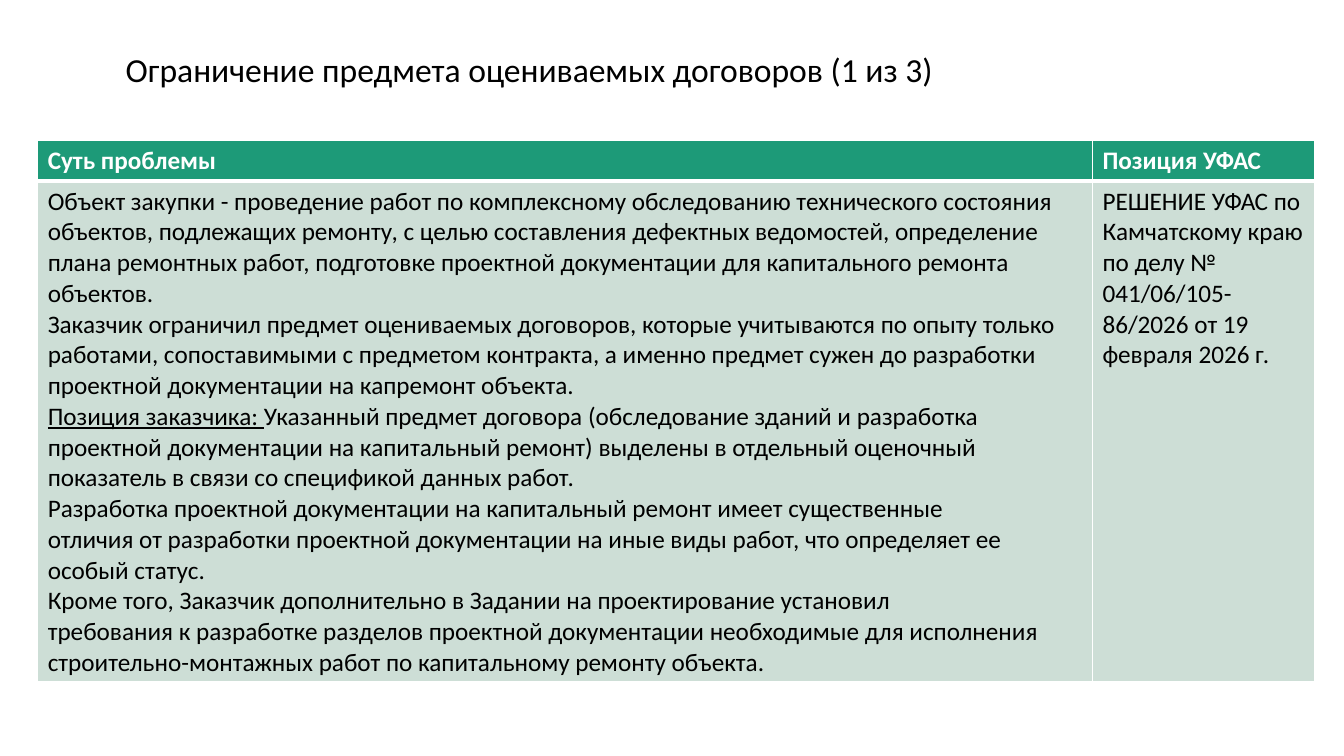
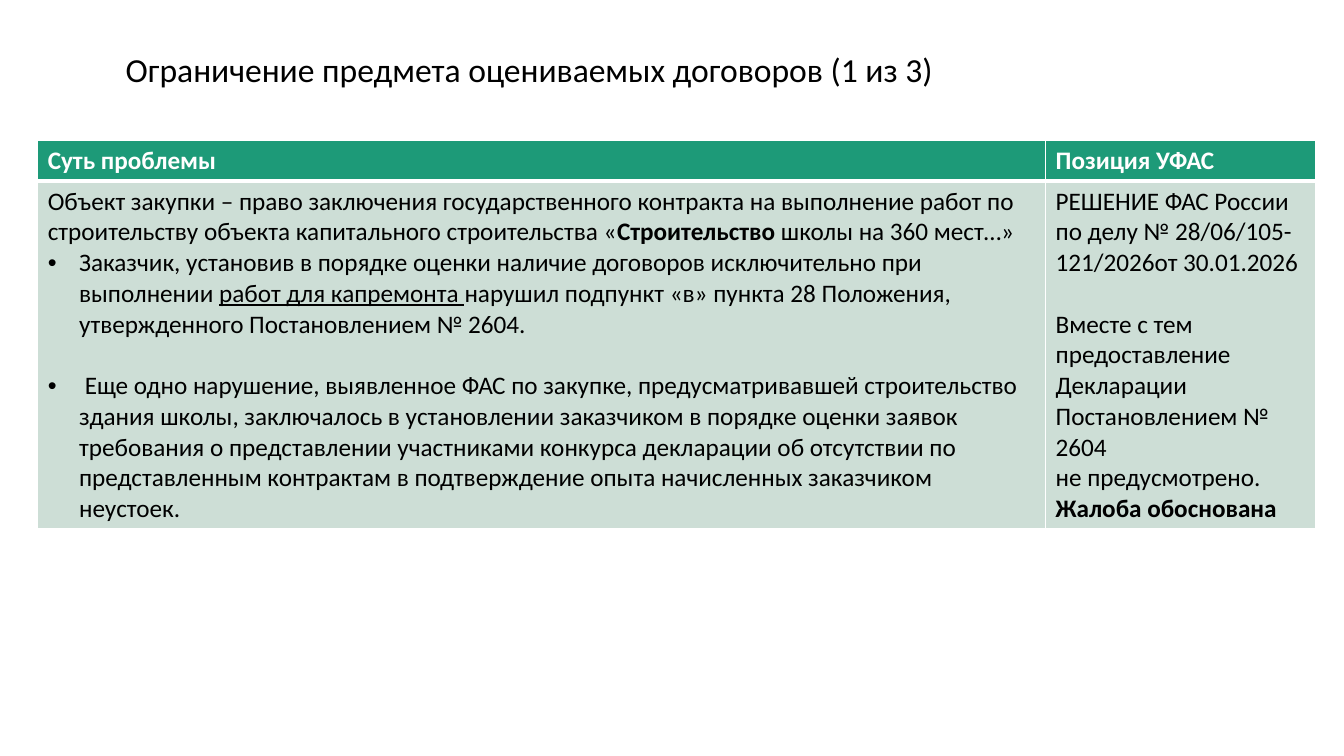
from dataclasses import dataclass

from lxml import etree
from pptx import Presentation
from pptx import util as u
from pptx.dml.color import RGBColor
from pptx.enum import text
from pptx.oxml.ns import qn

COLORS = {"ink": "000000", "white": "FFFFFF", "header": "1D9A78", "body": "CDDED6"}
FONT = "Calibri"
TITLE = "Ограничение предмета оцениваемых договоров (1 из 3)"
HEADERS = ("Суть проблемы", "Позиция УФАС")
BODY_SIZE = 18
BLANK_LINE = 22
HEADER_HEIGHT = 1.03
BULLET_INDENT = 0.79


@dataclass(frozen=True)
class Run:
    text: str
    bold: bool = False
    underline: bool = False


@dataclass(frozen=True)
class Para:
    runs: tuple[Run, ...]
    bullet: bool = False
    before: float = 0


@dataclass(frozen=True)
class Case:
    widths: tuple[float, float]
    height: float
    problem: tuple[Para, ...]
    position: tuple[Para, ...]


def para(*parts: str | Run, bullet: bool = False, before: float = 0) -> Para:
    runs = tuple(Run(part) if isinstance(part, str) else part for part in parts)
    return Para(runs, bullet, before)


CASES = (
    Case(
        (26.58, 5.6),
        12.62,
        (
            para("Объект закупки - проведение работ по комплексному обследованию технического состояния "
                 "объектов, подлежащих ремонту, с целью составления дефектных ведомостей, определение "
                 "плана ремонтных работ, подготовке проектной документации для капитального ремонта объектов."),
            para("Заказчик ограничил предмет оцениваемых договоров, которые учитываются по опыту только "
                 "работами, сопоставимыми с предметом контракта, а именно предмет сужен до разработки "
                 "проектной документации на капремонт объекта."),
            para(Run("Позиция заказчика: ", underline=True),
                 "Указанный предмет договора (обследование зданий и разработка проектной документации "
                 "на капитальный ремонт) выделены в отдельный оценочный показатель в связи со спецификой "
                 "данных работ."),
            para("Разработка проектной документации на капитальный ремонт имеет существенные"),
            para("отличия от разработки проектной документации на иные виды работ, что определяет ее"),
            para("особый статус."),
            para("Кроме того, Заказчик дополнительно в Задании на проектирование установил"),
            para("требования к разработке разделов проектной документации необходимые для исполнения"),
            para("строительно-монтажных работ по капитальному ремонту объекта."),
        ),
        (
            para("РЕШЕНИЕ УФАС по Камчатскому краю"),
            para("по делу № 041/06/105-86/2026 от 19 февраля 2026 г."),
        ),
    ),
    Case(
        (25.4, 6.8),
        8.76,
        (
            para("Объект закупки – право заключения государственного контракта на выполнение работ по "
                 "строительству объекта капитального строительства «",
                 Run("Строительство", bold=True),
                 " школы на 360 мест…»"),
            para("Заказчик, установив в порядке оценки наличие договоров исключительно при выполнении ",
                 Run("работ для капремонта ", underline=True),
                 "нарушил подпункт «в» пункта 28 Положения, утвержденного Постановлением № 2604.",
                 bullet=True),
            para(" Еще одно нарушение, выявленное ФАС по закупке, предусматривавшей строительство "
                 "здания школы, заключалось в установлении заказчиком в порядке оценки заявок требования "
                 "о представлении участниками конкурса декларации об отсутствии по представленным "
                 "контрактам в подтверждение опыта начисленных заказчиком неустоек.",
                 bullet=True, before=BLANK_LINE),
        ),
        (
            para("РЕШЕНИЕ ФАС России"),
            para("по делу № 28/06/105-121/2026от 30.01.2026"),
            para("Вместе с тем предоставление Декларации Постановлением № 2604", before=BLANK_LINE),
            para("не предусмотрено."),
            para(Run("Жалоба обоснована", bold=True)),
        ),
    ),
)


def add_bullet(p) -> None:
    pPr = p._p.get_or_add_pPr()
    pPr.set("marL", str(u.Cm(BULLET_INDENT)))
    pPr.set("indent", str(-u.Cm(BULLET_INDENT)))
    etree.SubElement(pPr, qn("a:buFont"), typeface="Arial")
    etree.SubElement(pPr, qn("a:buChar"), char="•")


def write(tf, paras: tuple[Para, ...], *, size: float = BODY_SIZE, color: str = "ink",
          line_spacing: float = 1.0) -> None:
    for i, item in enumerate(paras):
        p = tf.paragraphs[0] if i == 0 else tf.add_paragraph()
        if item.bullet:
            add_bullet(p)
        p.line_spacing = line_spacing
        p.space_before = u.Pt(item.before)
        for part in item.runs:
            r = p.add_run()
            r.text = part.text
            r.font.name = FONT
            r.font.size = u.Pt(size)
            r.font.bold = part.bold
            r.font.underline = part.underline
            r.font.color.rgb = RGBColor.from_string(COLORS[color])


def style_cell(cell, fill: str, top: float, bottom: float) -> None:
    tcPr = cell._tc.get_or_add_tcPr()
    for side, width in (("L", 1), ("R", 1), ("T", top), ("B", bottom)):
        ln = etree.SubElement(tcPr, qn(f"a:ln{side}"), w=str(u.Pt(width)))
        solid = etree.SubElement(ln, qn("a:solidFill"))
        etree.SubElement(solid, qn("a:srgbClr"), val=COLORS["white"])
    cell.fill.solid()
    cell.fill.fore_color.rgb = RGBColor.from_string(COLORS[fill])


def add_title(s) -> None:
    tf = s.shapes.add_textbox(u.Cm(2.92), u.Cm(0.74), u.Cm(29.21), u.Cm(2.11)).text_frame
    tf.word_wrap = True
    tf.vertical_anchor = text.MSO_ANCHOR.MIDDLE
    write(tf, (para(TITLE),), size=24, line_spacing=0.9)


def add_case_table(s, case: Case) -> None:
    heights = (HEADER_HEIGHT, case.height)
    table = s.shapes.add_table(2, 2, u.Cm(0.95), u.Cm(3.53),
                               u.Cm(sum(case.widths)), u.Cm(sum(heights))).table
    table.horz_banding = False
    for row, height in zip(table.rows, heights):
        row.height = u.Cm(height)
    for col, (header, body) in enumerate(zip(HEADERS, (case.problem, case.position))):
        table.columns[col].width = u.Cm(case.widths[col])
        head_cell, body_cell = table.cell(0, col), table.cell(1, col)
        style_cell(head_cell, "header", top=1, bottom=3)
        style_cell(body_cell, "body", top=3, bottom=1)
        write(head_cell.text_frame, (para(Run(header, bold=True)),), color="white")
        write(body_cell.text_frame, body)


def main() -> None:
    prs = Presentation()
    prs.slide_width, prs.slide_height = u.Cm(33.87), u.Cm(19.05)
    for case in CASES:
        s = prs.slides.add_slide(prs.slide_layouts[6])
        add_title(s)
        add_case_table(s, case)
    prs.save("out.pptx")


if __name__ == "__main__":
    main()
